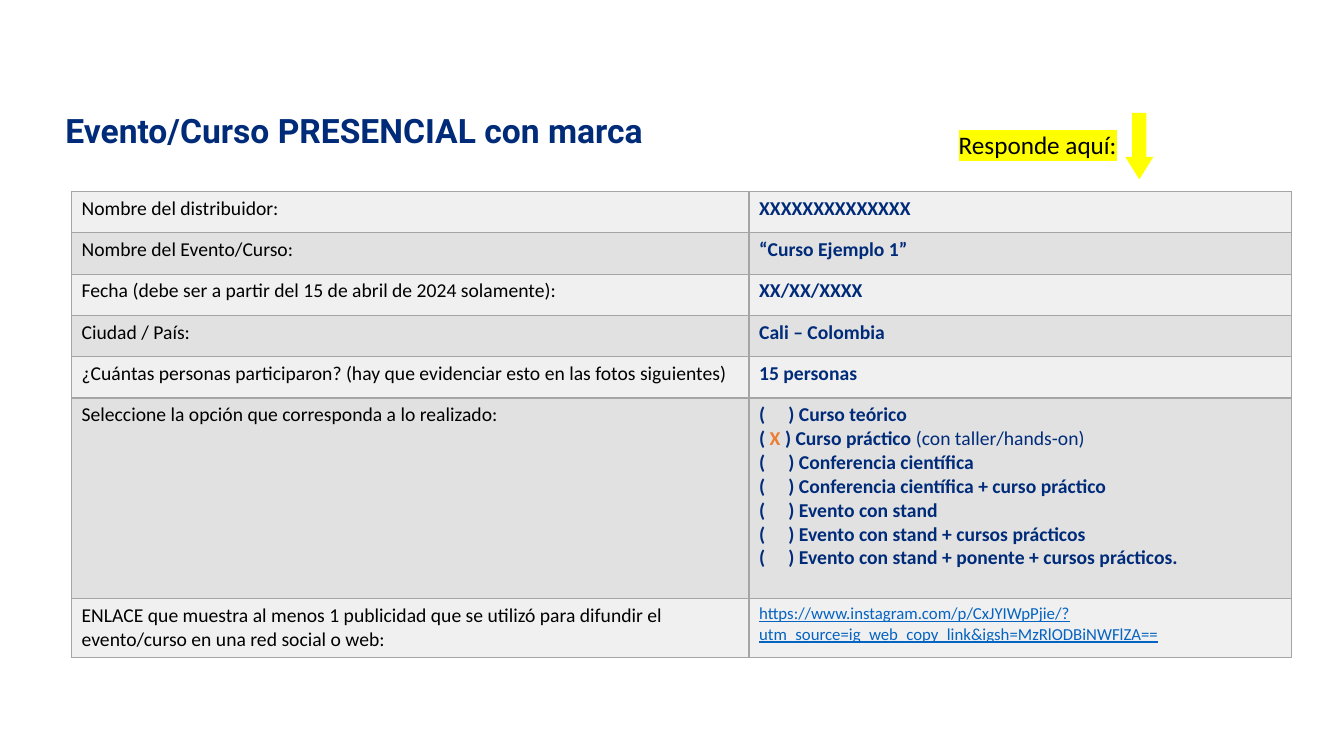
"""Build the slide with the report form for an on-site event or course."""
import pptx
import pptx.util
import pptx.dml.color
import pptx.enum.shapes
import pptx.enum.text
import pptx.oxml
import pptx.oxml.ns

Inches = pptx.util.Inches
Pt = pptx.util.Pt
NAVY, BLACK, ORANGE, LINK = "002B79", "000000", "ED7D31", "0563C1"
YELLOW, EDGE, BANDS = "FFFF00", "A5A5A5", ("F0F0F0", "E1E1E1")
BOLD = {"color": NAVY, "bold": True}

TITLE = "Evento/Curso PRESENCIAL con marca"
PROMPT = "Responde aquí:"
OPTIONS = [
    "Curso teórico",
    "Curso práctico",
    "Conferencia científica",
    "Conferencia científica + curso práctico",
    "Evento con stand",
    "Evento con stand + cursos prácticos",
    "Evento con stand + ponente + cursos prácticos.",
]
CHOSEN, DETAIL = "Curso práctico", "(con taller/hands-on)"
URL = ("https://www.instagram.com/p/CxJYIWpPjie/?"
       "utm_source=ig_web_copy_link&igsh=MzRlODBiNWFlZA==")
ROWS = [
    ("Nombre del distribuidor:", "XXXXXXXXXXXXXX", 0.41),
    ("Nombre del Evento/Curso:", "“Curso Ejemplo 1”", 0.41),
    ("Fecha (debe ser a partir del 15 de abril de 2024 solamente):", "XX/XX/XXXX", 0.41),
    ("Ciudad / País:", "Cali – Colombia", 0.41),
    ("¿Cuántas personas participaron? (hay que evidenciar esto en las fotos siguientes)",
     "15 personas", 0.41),
    ("Seleccione la opción que corresponda a lo realizado:", OPTIONS, 1.99),
    ("ENLACE que muestra al menos 1 publicidad que se utilizó para difundir el "
     "evento/curso en una red social o web:", URL, 0.58),
]
COLS = (6.72, 5.38)


def tint(hue):
    return pptx.dml.color.RGBColor.from_string(hue)


def node(tag, inner="", **attrs):
    pairs = "".join(f' {key}="{value}"' for key, value in attrs.items())
    space = pptx.oxml.ns.nsdecls("a")
    return pptx.oxml.parse_xml(f"<a:{tag} {space}{pairs}>{inner}</a:{tag}>")


def write(para, text, size=14, face="Calibri", color=BLACK, bold=False,
          under=False, mark=None):
    run = para.add_run()
    run.text = text
    font = run.font
    font.size, font.name, font.bold = Pt(size), face, bold
    font.underline = under
    font.color.rgb = tint(color)
    if mark:
        fill = run._r.rPr.find(pptx.oxml.ns.qn("a:solidFill"))
        fill.addnext(node("highlight", f'<a:srgbClr val="{mark}"/>'))


def label(slide, box, text, middle=False, lead=1.0, **style):
    frame = slide.shapes.add_textbox(*map(Inches, box)).text_frame
    frame.word_wrap = True
    if middle:
        frame.vertical_anchor = pptx.enum.text.MSO_ANCHOR.MIDDLE
    para = frame.paragraphs[0]
    para.line_spacing = lead
    write(para, text, **style)


def choices(frame):
    for i, option in enumerate(OPTIONS):
        para = frame.add_paragraph() if i else frame.paragraphs[0]
        if option == CHOSEN:
            write(para, "(", **BOLD)
            write(para, " X ", color=ORANGE, bold=True)
            write(para, f") {option} ", **BOLD)
            write(para, DETAIL, color=NAVY)
        else:
            stop = f'<a:tab pos="{Inches(0.29)}" algn="l"/>'
            para._p.get_or_add_pPr().append(node("tabLst", stop))
            write(para, f"(\t) {option}", **BOLD)


def style(cell, hue):
    cell.fill.solid()
    cell.fill.fore_color.rgb = tint(hue)
    props = cell._tc.get_or_add_tcPr()
    paint = f'<a:solidFill><a:srgbClr val="{EDGE}"/></a:solidFill>'
    for i, side in enumerate(("lnL", "lnR", "lnT", "lnB")):
        props.insert(i, node(side, paint, w=Pt(1)))


def form(slide):
    high = sum(row[2] for row in ROWS)
    box = (0.71, 1.9, sum(COLS), high)
    grid = slide.shapes.add_table(len(ROWS), len(COLS), *map(Inches, box)).table
    for col, wide in zip(grid.columns, COLS):
        col.width = Inches(wide)
    for i, (ask, answer, tall) in enumerate(ROWS):
        grid.rows[i].height = Inches(tall)
        left, right = grid.rows[i].cells
        for cell in (left, right):
            style(cell, BANDS[i % 2])
        write(left.text_frame.paragraphs[0], ask)
        para = right.text_frame.paragraphs[0]
        if answer is OPTIONS:
            choices(right.text_frame)
        elif answer is URL:
            write(para, answer, size=12, color=LINK, under=True)
        else:
            write(para, answer, **BOLD)


def main():
    deck = pptx.Presentation()
    deck.slide_width, deck.slide_height = Inches(13.33), Inches(7.5)
    slide = deck.slides.add_slide(deck.slide_layouts[6])
    label(slide, (0.55, 1.06, 7.65, 0.52), TITLE, middle=True, lead=0.9,
          size=24, face="Roboto", **BOLD)
    form(slide)
    label(slide, (9.41, 1.23, 2.12, 0.4), PROMPT, size=18, mark=YELLOW)
    kind = pptx.enum.shapes.MSO_SHAPE.DOWN_ARROW
    arrow = slide.shapes.add_shape(kind, *map(Inches, (11.16, 1.12, 0.28, 0.66)))
    arrow.adjustments[0], arrow.adjustments[1] = 0.5, 0.8
    arrow.shadow.inherit = False
    arrow.fill.solid()
    arrow.fill.fore_color.rgb = tint(YELLOW)
    arrow.line.fill.background()
    deck.save("out.pptx")


if __name__ == "__main__":
    main()
